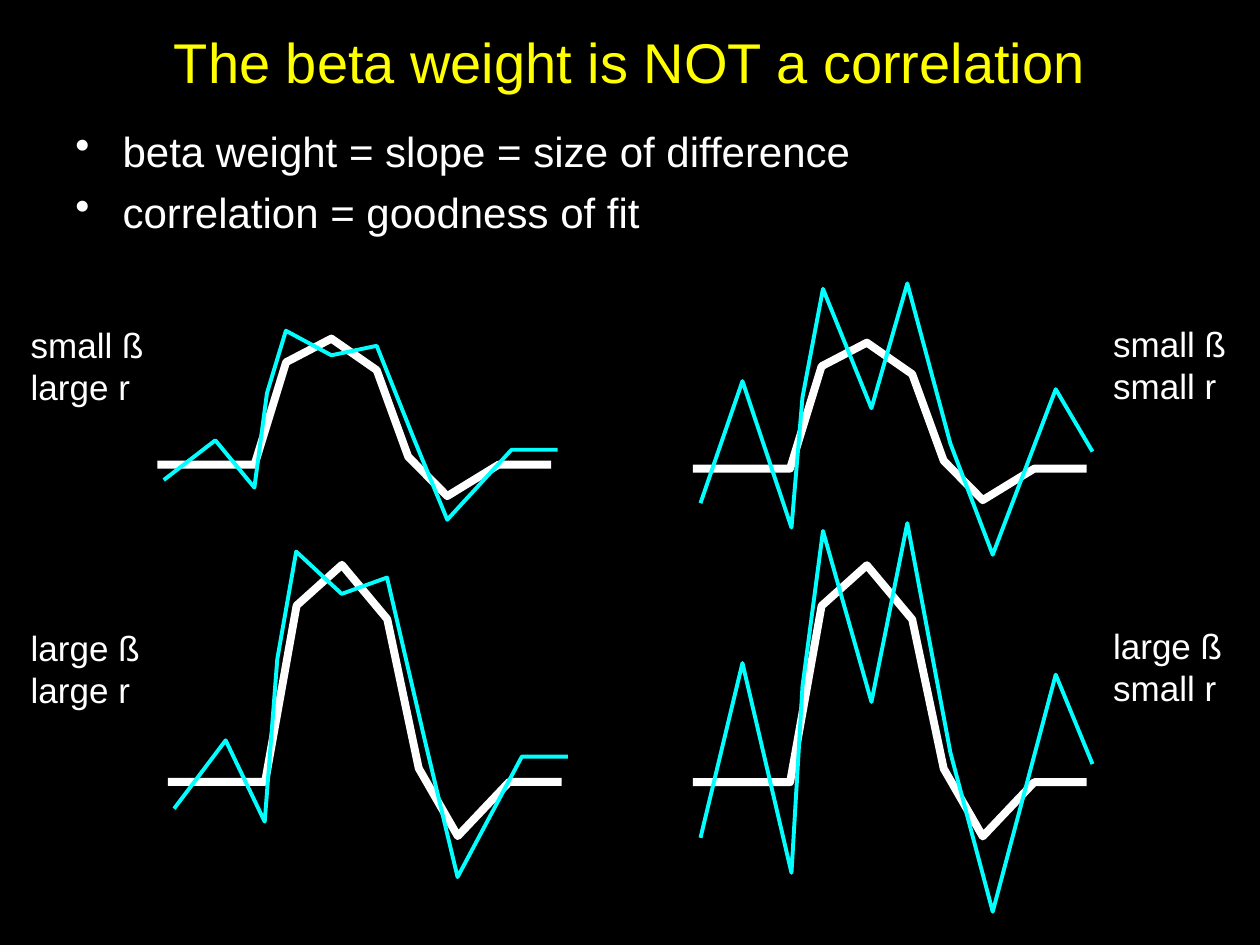
"""Build a slide contrasting the beta weight with the correlation."""
from typing import NamedTuple

from lxml.etree import SubElement
from pptx import Presentation
from pptx.dml.color import RGBColor
from pptx.enum.text import MSO_ANCHOR as Anchor, PP_ALIGN as Align
from pptx.oxml.ns import qn
from pptx.slide import Slide
from pptx.text.text import TextFrame
from pptx.util import Pt

BLACK = RGBColor(0x00, 0x00, 0x00)
WHITE = RGBColor(0xFF, 0xFF, 0xFF)
YELLOW = RGBColor(0xFF, 0xFF, 0x00)
CYAN = RGBColor(0x00, 0xFF, 0xFF)
FONT = "Arial"


class Curve(NamedTuple):
    """Horizontal offsets in points, heights as shares of the curve, and line style."""
    xs: tuple[float, ...]
    ys: tuple[float, ...]
    color: RGBColor
    weight: float


class Trace(NamedTuple):
    """A curve placed on the page, in points."""
    curve: Curve
    left: float
    top: float
    height: float


class Label(NamedTuple):
    """The two lines of text beside a graph, in points."""
    left: float
    top: float
    width: float
    lines: tuple[str, str]


MODEL = Curve((0, 55.5, 73.5, 99.4, 125.3, 143.3, 165.6, 195, 225),
              (0.8, 0.8, 0.15, 0, 0.2, 0.75, 1, 0.8, 0.8), WHITE, 4.5)
CLOSE_FIT = Curve((0, 29.5, 51.8, 59, 69.8, 95.8, 121.7, 143.3, 162, 198.7, 225),
                  (0.79, 0.58, 0.83, 0.33, 0, 0.13, 0.08, 0.58, 1, 0.63, 0.63), CYAN, 2.25)
POOR_FIT = Curve((0, 24, 52, 58.3, 70, 97.7, 118.2, 142.8, 167, 203, 224),
                 (0.81, 0.36, 0.9, 0.42, 0.02, 0.46, 0, 0.59, 1, 0.39, 0.62), CYAN, 2.25)

TRACES = (
    Trace(MODEL, 90, 193.5, 90), Trace(CLOSE_FIT, 93.6, 189, 108),
    Trace(MODEL, 396, 195.8, 90), Trace(POOR_FIT, 400.3, 162, 155),
    Trace(MODEL, 96, 322.8, 155), Trace(CLOSE_FIT, 99.5, 315.2, 186),
    Trace(MODEL, 396, 323, 155), Trace(POOR_FIT, 400.3, 299, 222),
)
LABELS = (
    Label(10.5, 181.4, 79.2, ("small ß", "large r")),
    Label(10.5, 354.2, 77, ("large ß", "large r")),
    Label(629, 180.7, 79.2, ("small ß", "small r")),
    Label(629, 353.5, 77, ("large ß", "small r")),
)
BULLETS = ("beta weight = slope = size of difference", "correlation = goodness of fit")


def add_text(page: Slide, left: float, top: float, width: float, height: float,
             lines: tuple[str, ...], size: float, color: RGBColor,
             wrap: bool = True) -> TextFrame:
    """Add a text box with one paragraph per line and return its frame."""
    frame = page.shapes.add_textbox(Pt(left), Pt(top), Pt(width), Pt(height)).text_frame
    frame.word_wrap = wrap
    for index, line in enumerate(lines):
        para = frame.add_paragraph() if index else frame.paragraphs[0]
        span = para.add_run()
        span.text = line
        span.font.name = FONT
        span.font.size = Pt(size)
        span.font.color.rgb = color
    return frame


def add_bullets(frame: TextFrame, indent: float, gap: float) -> None:
    """Give each paragraph a hanging bullet, with a gap between paragraphs."""
    for index, para in enumerate(frame.paragraphs):
        if index:
            para.space_before = Pt(gap)
        properties = para._p.get_or_add_pPr()
        properties.set("marL", str(Pt(indent)))
        properties.set("indent", str(-Pt(indent)))
        SubElement(properties, qn("a:buChar")).set("char", "•")


def add_trace(page: Slide, trace: Trace) -> None:
    """Draw a curve as an open outline."""
    curve = trace.curve
    points = [(Pt(trace.left + x), Pt(trace.top + y * trace.height))
              for x, y in zip(curve.xs, curve.ys)]
    builder = page.shapes.build_freeform(*points[0])
    builder.add_line_segments(points[1:], close=False)
    shape = builder.convert_to_shape()
    shape.shadow.inherit = False
    shape.fill.background()
    shape.line.color.rgb = curve.color
    shape.line.width = Pt(curve.weight)


def main() -> None:
    """Create the deck and save it."""
    deck = Presentation()
    deck.slide_width, deck.slide_height = Pt(720), Pt(540)
    page = deck.slides.add_slide(deck.slide_layouts[6])
    page.background.fill.solid()
    page.background.fill.fore_color.rgb = BLACK

    title = add_text(page, 54, 12.25, 612, 45.4,
                     ("The beta weight is NOT a correlation",), 32, YELLOW)
    title.vertical_anchor = Anchor.MIDDLE
    title.paragraphs[0].alignment = Align.CENTER
    add_bullets(add_text(page, 36, 68, 654, 408, BULLETS, 24, WHITE), 27, 6)

    for trace in TRACES:
        add_trace(page, trace)
    for label in LABELS:
        add_text(page, label.left, label.top, label.width, 55.5, label.lines, 20, WHITE,
                 wrap=False)
    deck.save("out.pptx")


if __name__ == "__main__":
    main()
